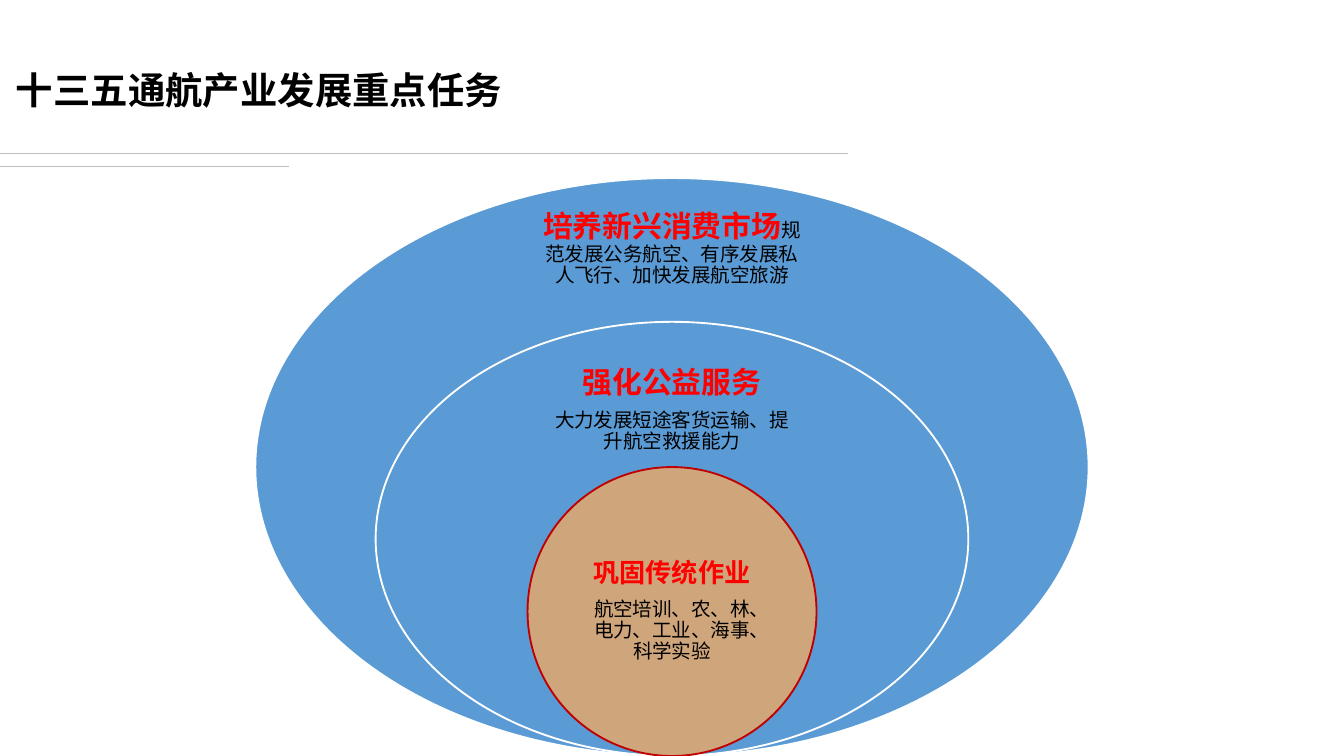
from lxml.etree import SubElement
from pptx import Presentation
from pptx.dml.color import RGBColor
from pptx.enum.shapes import MSO_CONNECTOR, MSO_SHAPE
from pptx.enum.text import MSO_ANCHOR, PP_ALIGN
from pptx.oxml.ns import qn
from pptx.util import Inches, Pt

WIDTH = 10
HEIGHT = WIDTH * 9 / 16
FONT = "Karla"
TITLE = "十三五通航产业发展重点任务"
RULES = [(1.14, 6.31), (1.24, 2.15)]  # height on the slide, length

HEADING = {"size": 16, "bold": True, "color": "FF0000"}
SMALL_HEADING = {**HEADING, "size": 14}
BODY = {"size": 10.5, "bold": False, "color": "000000"}

# Nested ellipses, outermost first; each text is a list of paragraphs of (words, format)
RINGS = [
    {"size": (6.2, 4.3), "fill": "5B9BD5", "line": "FFFFFF",
     "text_top": 1.53, "text_size": (2.17, 0.65), "inset": 0.12,
     "text": [[("培养新兴消费市场", HEADING),
               ("规范发展公务航空、有序发展私人飞行、加快发展航空旅游", BODY)]]},
    {"size": (4.41, 3.23), "fill": "5B9BD5", "line": "FFFFFF",
     "text_top": 2.75, "text_size": (2.05, 0.61), "inset": 0.11,
     "text": [[("强化公益服务", HEADING)],
              [("大力发展短途客货运输、提升航空救援能力", BODY)]]},
    {"size": (2.15, 2.15), "fill": "CFA57C", "line": "C00000",
     "text_top": 4.01, "text_size": (1.52, 1.08), "inset": 0.11,
     "text": [[("巩固传统作业", SMALL_HEADING)],
              [("航空培训、农、林、电力、工业、海事、科学实验", BODY)]]},
]


def color(value):
    return RGBColor.from_string(value)


def add_rule(page, top, length):
    rule = page.shapes.add_connector(
        MSO_CONNECTOR.STRAIGHT, 0, Inches(top), Inches(length), Inches(top))
    rule.line.color.rgb = color("BFBFBF")
    rule.line.width = Pt(0.5)
    SubElement(rule._element.spPr, qn("a:effectLst"))


def add_text(page, place, paragraphs, frame_format, paragraph_format):
    box = page.shapes.add_textbox(*map(Inches, place))
    frame = box.text_frame
    for name, value in {"word_wrap": True, **frame_format}.items():
        setattr(frame, name, value)
    for index, spans in enumerate(paragraphs):
        para = frame.add_paragraph() if index else frame.paragraphs[0]
        for name, value in {"line_spacing": 0.9, **paragraph_format}.items():
            setattr(para, name, value)
        for words, style in spans:
            span = para.add_run()
            span.text = words
            span.font.name = FONT
            span.font.size = Pt(style["size"])
            span.font.bold = style["bold"]
            span.font.color.rgb = color(style["color"])


def add_ring(page, ring):
    """Draw an ellipse that is centred and rests on the slide's bottom edge, with its text."""
    width, height = ring["size"]
    ellipse = page.shapes.add_shape(
        MSO_SHAPE.OVAL, Inches((WIDTH - width) / 2), Inches(HEIGHT - height),
        Inches(width), Inches(height))
    ellipse.shadow.inherit = False
    ellipse.fill.solid()
    ellipse.fill.fore_color.rgb = color(ring["fill"])
    ellipse.line.color.rgb = color(ring["line"])
    ellipse.line.width = Pt(1)

    text_width, text_height = ring["text_size"]
    sides = ("left", "top", "right", "bottom")
    frame_format = {f"margin_{side}": Inches(ring["inset"]) for side in sides}
    frame_format["vertical_anchor"] = MSO_ANCHOR.MIDDLE
    add_text(page,
             ((WIDTH - text_width) / 2, ring["text_top"], text_width, text_height),
             ring["text"], frame_format,
             {"alignment": PP_ALIGN.CENTER, "space_after": Pt(5.6)})


def main():
    deck = Presentation()
    deck.slide_width, deck.slide_height = Inches(WIDTH), Inches(HEIGHT)
    page = deck.slides.add_slide(deck.slide_layouts[6])
    for top, length in RULES:
        add_rule(page, top, length)
    title_style = {"size": 20, "bold": True, "color": "000000"}
    add_text(page, (0.02, 0.49, 4.01, 0.31), [[(TITLE, title_style)]],
             {"vertical_anchor": MSO_ANCHOR.TOP}, {"alignment": PP_ALIGN.LEFT})
    for ring in RINGS:
        add_ring(page, ring)
    deck.save("out.pptx")


if __name__ == "__main__":
    main()
